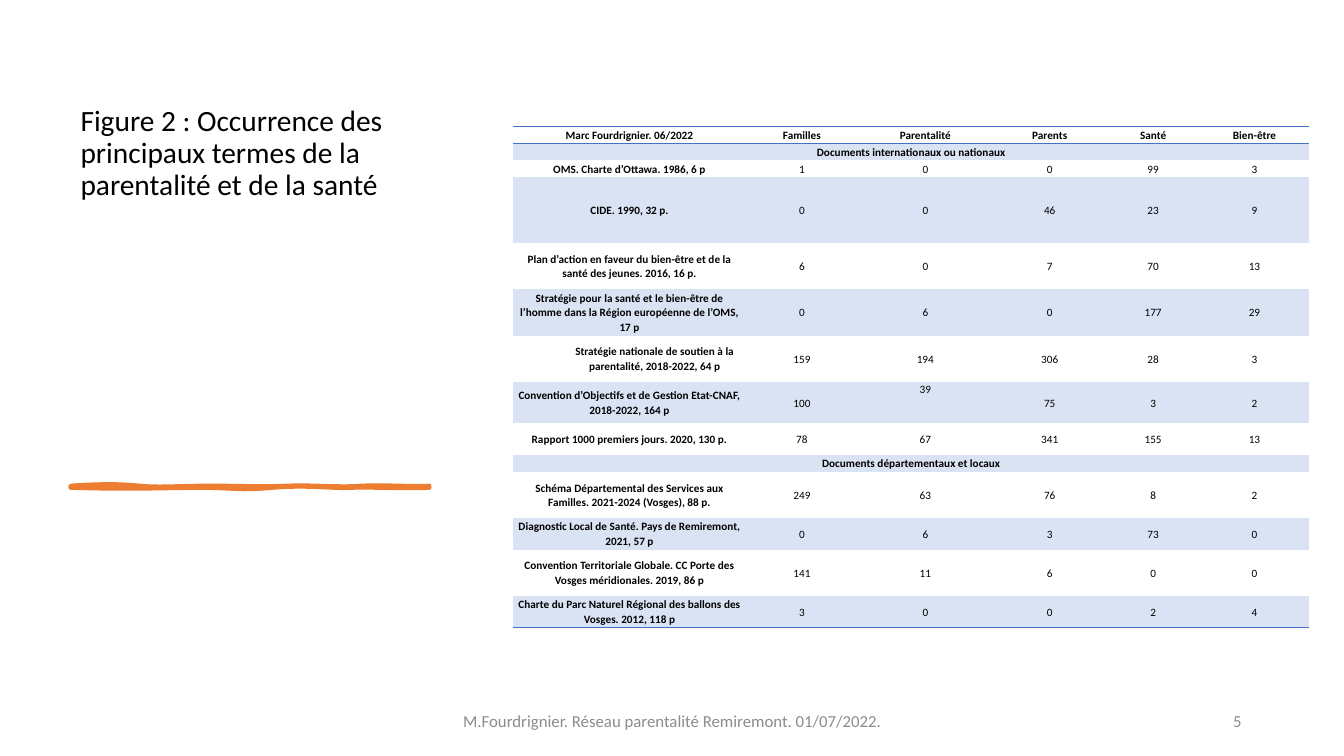
from lxml.etree import SubElement
from pptx import Presentation
from pptx.dml.color import RGBColor
from pptx.enum.text import MSO_ANCHOR, PP_ALIGN
from pptx.oxml.ns import qn
from pptx.util import Cm, Pt

BLUE, PALE, BLACK, GREY, ORANGE = "4472C4", "DAE3F3", "000000", "8C8C8C", "ED7D31"
NO_STYLE = "{2D5ABB26-0587-4C30-8999-92F81FD0307C}"

COLS = [5.87, 2.82, 3.4, 2.87, 2.34, 2.77]
ROWS = [
    (0.43, "Marc Fourdrignier. 06/2022", "Familles", "Parentalité", "Parents", "Santé", "Bien-être"),
    (0.43, "Documents internationaux ou nationaux"),
    (0.43, "OMS. Charte d’Ottawa. 1986, 6 p", 1, 0, 0, 99, 3),
    (1.65, "CIDE. 1990, 32 p.", 0, 0, 46, 23, 9),
    (1.17, "Plan d’action en faveur du bien-être et de la santé des jeunes. 2016, 16 p.", 6, 0, 7, 70, 13),
    (1.17, "Stratégie pour la santé et le bien-être de l’homme dans la Région européenne de l’OMS, 17 p",
     0, 6, 0, 177, 29),
    (1.17, "Stratégie nationale de soutien à la parentalité, 2018-2022, 64 p", 159, 194, 306, 28, 3),
    (1.04, "Convention d’Objectifs et de Gestion Etat-CNAF, 2018-2022, 164 p", 100, 39, 75, 3, 2),
    (0.79, "Rapport 1000 premiers jours. 2020, 130 p.", 78, 67, 341, 155, 13),
    (0.43, "Documents départementaux et locaux"),
    (1.17, "Schéma Départemental des Services aux Familles. 2021-2024 (Vosges), 88 p.", 249, 63, 76, 8, 2),
    (0.79, "Diagnostic Local de Santé. Pays de Remiremont, 2021, 57 p", 0, 6, 3, 73, 0),
    (1.17, "Convention Territoriale Globale. CC Porte des Vosges méridionales. 2019, 86 p", 141, 11, 6, 0, 0),
    (0.79, "Charte du Parc Naturel Régional des ballons des Vosges. 2012, 118 p", 3, 0, 0, 2, 4),
]
STROKE = [
    ((0.69, -0.05), (1.3, -0.05), (1.73, 0)),
    ((2.16, 0.05), (2.72, 0), (3.53, 0)),
    ((4.34, 0), (4.83, 0.03), (5.44, 0)),
    ((6.05, -0.03), (6.83, 0.05), (7.34, 0)),
    ((7.85, -0.03), (8.69, 0.03), (9.04, 0)),
    ((9.04, 0.03), (9.04, 0.05), (9.04, 0.05)),
    ((8.59, 0.08), (7.47, 0.03), (7.06, 0.05)),
    ((6.65, 0.08), (5.94, -0.03), (5.08, 0.05)),
    ((4.22, 0.13), (4.09, 0.05), (3.28, 0.05)),
    ((2.44, 0.05), (1.63, 0.1), (0, 0.05)),
]


def color(code):
    return RGBColor.from_string(code)


def style(frame, size, code, align, bold=False):
    for par in frame.paragraphs:
        par.alignment = align
        for run in par.runs:
            font = run.font
            font.name, font.size, font.bold = "Calibri", Pt(size), bold
            font.color.rgb = color(code)


def label(slide, box, text, size, code, align, anchor=MSO_ANCHOR.MIDDLE):
    frame = slide.shapes.add_textbox(*map(Cm, box)).text_frame
    frame.word_wrap = True
    frame.vertical_anchor = anchor
    frame.text = text
    style(frame, size, code, align)
    return frame


def title(slide, box):
    text = "Figure 2\u00a0: Occurrence des principaux termes de la parentalité et de la santé"
    frame = label(slide, box, text, 21, BLACK, PP_ALIGN.LEFT, MSO_ANCHOR.TOP)
    frame.margin_top = Cm(0.9)
    frame.paragraphs[0].line_spacing = 0.9


def curve(start, bend, steps=8):
    points = (start, *bend)
    for step in range(1, steps + 1):
        t = step / steps
        parts = ((1 - t) ** 3, 3 * t * (1 - t) ** 2, 3 * t * t * (1 - t), t ** 3)
        yield tuple(sum(part * point[axis] for part, point in zip(parts, points)) for axis in (0, 1))


def brush(slide, left, top):
    start, dots = (0, 0), []
    for bend in STROKE:
        dots += curve(start, bend)
        start = bend[-1]
    form = slide.shapes.build_freeform(Cm(left), Cm(top))
    form.add_line_segments([(Cm(left + x), Cm(top + y)) for x, y in dots], close=True)
    shape = form.convert_to_shape()
    shape.shadow.inherit = False
    shape.fill.solid()
    shape.fill.fore_color.rgb = color(ORANGE)
    shape.line.color.rgb = color(ORANGE)
    shape.line.width = Pt(3)


def border(cell, sides):
    props = cell._tc.get_or_add_tcPr()
    for spot, side in enumerate(sides):
        line = SubElement(props, qn("a:ln" + side), w=str(Pt(1)))
        fill = SubElement(line, qn("a:solidFill"))
        SubElement(fill, qn("a:srgbClr"), val=BLUE)
        props.insert(spot, line)


def fill_cell(cell, text, bold, shade):
    cell.margin_left = cell.margin_right = Cm(0.12)
    cell.margin_top = cell.margin_bottom = 0
    cell.vertical_anchor = MSO_ANCHOR.MIDDLE
    cell.text = str(text)
    style(cell.text_frame, 8, BLACK, PP_ALIGN.CENTER, bold)
    cell.text_frame.paragraphs[0].line_spacing = 1.07
    if shade:
        cell.fill.solid()
        cell.fill.fore_color.rgb = color(PALE)
    else:
        cell.fill.background()


def counts(slide, left, top):
    size = sum(COLS), sum(row[0] for row in ROWS)
    table = slide.shapes.add_table(len(ROWS), len(COLS), *map(Cm, (left, top, *size))).table
    table.first_row = table.horz_banding = False
    table._tbl.tblPr.find(qn("a:tableStyleId")).text = NO_STYLE
    for col, width in zip(table.columns, COLS):
        col.width = Cm(width)
    edges = {0: "TB", len(ROWS) - 1: "B"}
    for r, (height, *texts) in enumerate(ROWS):
        table.rows[r].height = Cm(height)
        if len(texts) == 1:
            table.cell(r, 0).merge(table.cell(r, len(COLS) - 1))
        for c, text in enumerate(texts):
            cell = table.cell(r, c)
            fill_cell(cell, text, r == 0 or c == 0, r % 2 == 1)
            border(cell, edges.get(r, ""))
    table.cell(6, 0).margin_left = Cm(1.39)
    table.cell(7, 2).vertical_anchor = MSO_ANCHOR.TOP


def footer(slide, top):
    text = "M.Fourdrignier. Réseau parentalité Remiremont. 01/07/2022."
    label(slide, (11.23, top, 11.43, 1.01), text, 12, GREY, PP_ALIGN.CENTER)
    label(slide, (23.92, top, 7.62, 1.01), "5", 12, GREY, PP_ALIGN.RIGHT)


def main():
    deck = Presentation()
    deck.slide_width, deck.slide_height = Cm(33.87), Cm(19.05)
    slide = deck.slides.add_slide(deck.slide_layouts[6])
    title(slide, (1.78, 1.78, 9.93, 9.93))
    brush(slide, 1.78, 12.24)
    footer(slide, 17.65)
    counts(slide, 12.93, 3.18)
    deck.save("out.pptx")


if __name__ == "__main__":
    main()
